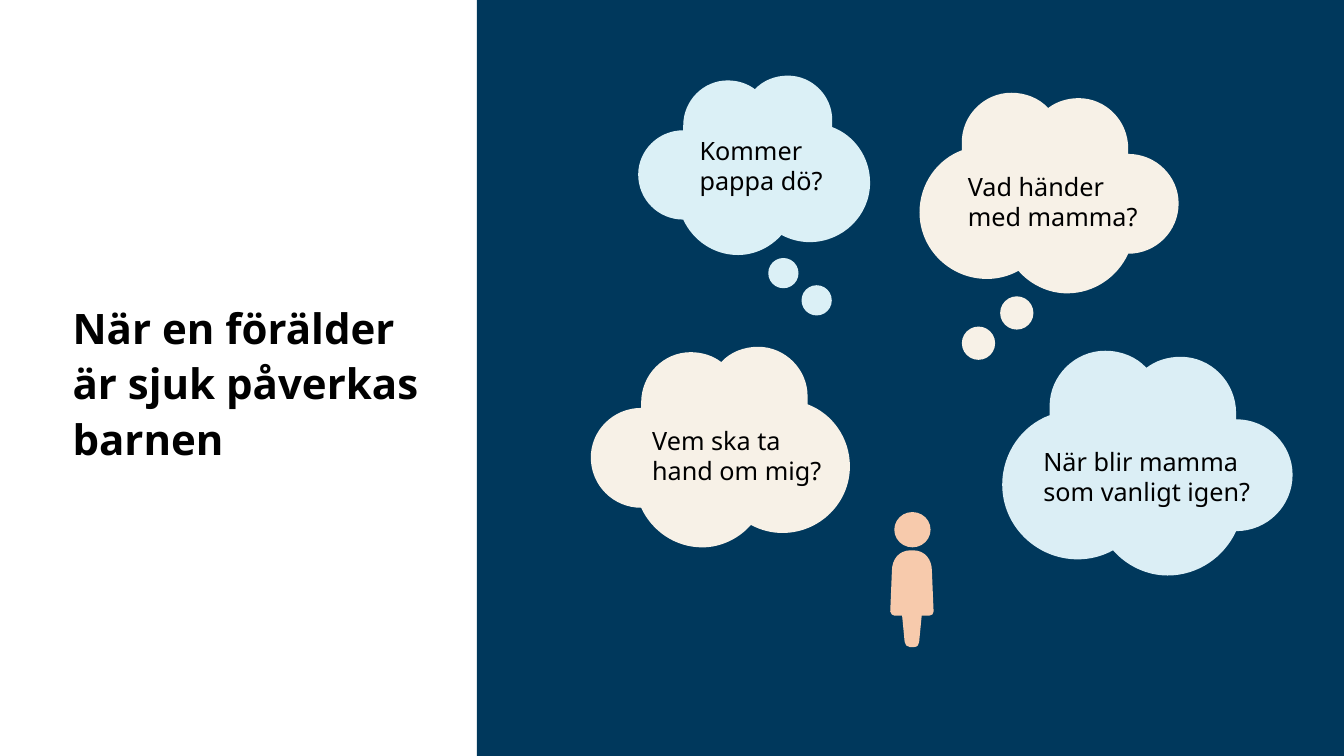
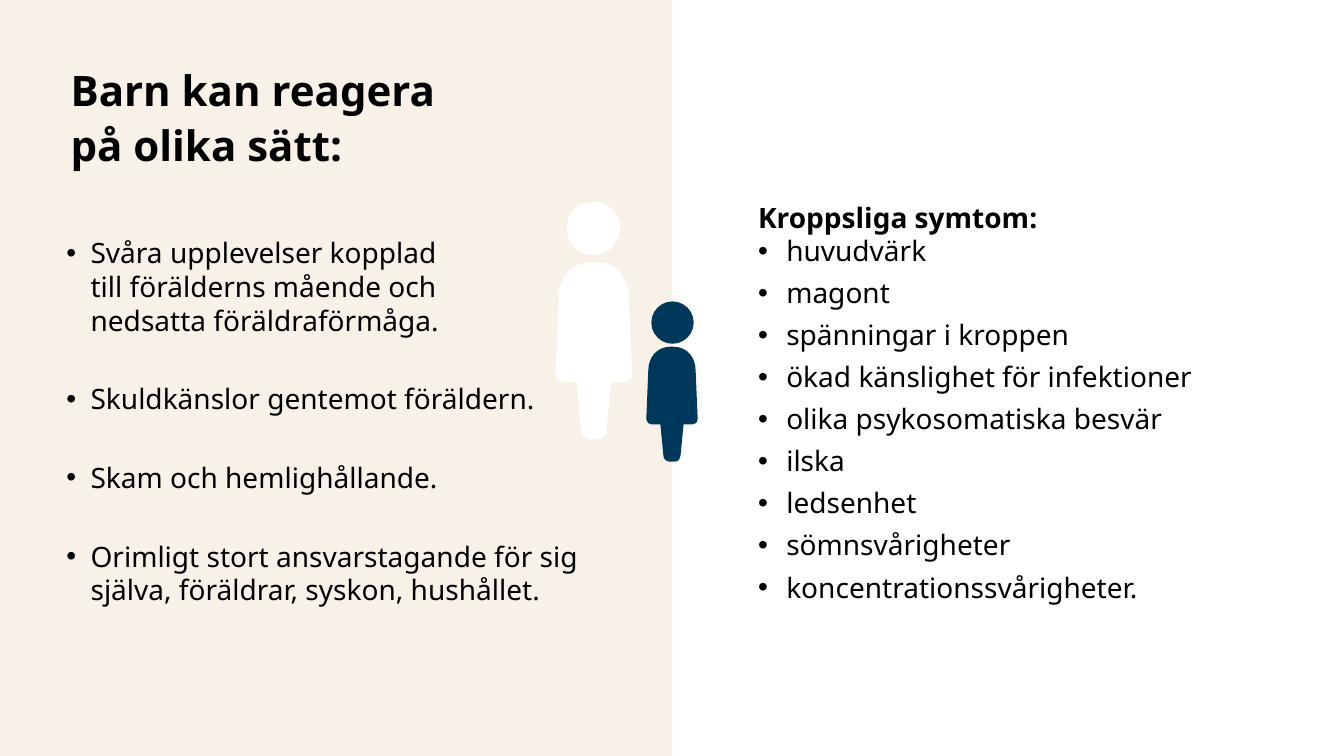
from dataclasses import dataclass
from itertools import chain, islice

from lxml import etree
from pptx import Presentation
from pptx.dml.color import RGBColor
from pptx.enum.shapes import MSO_SHAPE
from pptx.oxml import ns
from pptx.shapes import autoshape, shapetree as tree
from pptx.slide import Slide
from pptx.text.text import TextFrame, _Paragraph as Para
from pptx.util import Inches, Length, Pt

NAVY = RGBColor(0x00, 0x38, 0x5C)
CREAM = RGBColor(0xF7, 0xF1, 0xE7)
ICE = RGBColor(0xDB, 0xF0, 0xF6)
MIST = RGBColor(0xDB, 0xEE, 0xF5)
PEACH = RGBColor(0xF7, 0xCA, 0xAC)
WHITE = RGBColor(0xFF, 0xFF, 0xFF)
BLACK = RGBColor(0x00, 0x00, 0x00)
FONT = "Noto Sans"
WIDE, HIGH = 13.33, 7.5

Point = tuple[float, float]
Shapes = tree.SlideShapes | tree.GroupShapes


@dataclass(frozen=True)
class Box:
    x: float
    y: float
    w: float
    h: float

    def emu(self) -> tuple[Length, ...]:
        return tuple(Inches(v) for v in (self.x, self.y, self.w, self.h))


@dataclass(frozen=True)
class Form:
    """An outline of lines (one point) and curves (three points)."""
    w: float
    h: float
    start: Point
    legs: tuple[tuple[Point, ...], ...]


@dataclass(frozen=True)
class Cloud:
    box: Box
    fill: RGBColor
    label: Box
    lines: tuple[str, ...]
    flip: bool = False
    dots: tuple[Box, ...] = ()


@dataclass(frozen=True)
class Person:
    body: Box
    head: Box
    fill: RGBColor


PUFF = Form(2.88, 2.23, (2.32, 0.68), (
    ((2.32, 0.66), (2.32, 0.64), (2.32, 0.62)),
    ((2.32, 0.31), (2.07, 0.06), (1.77, 0.06)),
    ((1.64, 0.06), (1.52, 0.1), (1.43, 0.17)),
    ((1.33, 0.06), (1.18, 0), (1.02, 0)),
    ((0.72, 0), (0.47, 0.25), (0.47, 0.55)),
    ((0.47, 0.58), (0.47, 0.61), (0.47, 0.64)),
    ((0.2, 0.74), (0, 1.01), (0, 1.33)),
    ((0, 1.74), (0.34, 2.07), (0.75, 2.07)),
    ((0.87, 2.07), (0.99, 2.04), (1.1, 1.98)),
    ((1.23, 2.13), (1.43, 2.23), (1.64, 2.23)),
    ((1.94, 2.23), (2.2, 2.05), (2.32, 1.79)),
    ((2.63, 1.79), (2.88, 1.54), (2.88, 1.23)),
    ((2.88, 0.93), (2.63, 0.68), (2.32, 0.68)),
))
DRESS = Form(0.51, 1.14, (0.27, 0), (
    ((0.24, 0),),
    ((0.1, 0), (0.02, 0.11), (0.02, 0.24)),
    ((0, 0.72),),
    ((0, 0.75), (0.03, 0.77), (0.05, 0.77)),
    ((0.14, 0.77),),
    ((0.17, 1.08),),
    ((0.17, 1.11), (0.2, 1.14), (0.23, 1.14)),
    ((0.28, 1.14),),
    ((0.32, 1.14), (0.34, 1.11), (0.34, 1.08)),
    ((0.37, 0.77),),
    ((0.46, 0.77),),
    ((0.49, 0.77), (0.51, 0.75), (0.51, 0.72)),
    ((0.49, 0.24),),
    ((0.49, 0.11), (0.41, 0), (0.27, 0)),
))

CLOUDS = (
    Cloud(Box(6.33, 0.75, 2.3, 1.78), ICE, Box(6.84, 1.29, 1.71, 0.71),
          ("Kommer pappa dö?",), True,
          (Box(7.62, 2.56, 0.3, 0.3), Box(7.95, 2.83, 0.3, 0.3))),
    Cloud(Box(9.12, 0.92, 2.57, 1.99), CREAM, Box(9.5, 1.65, 2.02, 0.71),
          ("Vad händer med mamma?",), False,
          (Box(9.92, 2.94, 0.33, 0.33), Box(9.54, 3.24, 0.33, 0.33))),
    Cloud(Box(5.86, 3.44, 2.57, 1.99), CREAM, Box(6.37, 4.17, 1.99, 0.71),
          ("Vem ska ta", "hand om mig?"), True),
    Cloud(Box(9.94, 3.48, 2.88, 2.23), MIST, Box(10.25, 4.38, 2.37, 0.71),
          ("När blir mamma som vanligt igen?",)),
)
CHILD = Person(Box(8.83, 5.46, 0.43, 0.96), Box(8.87, 5.08, 0.36, 0.35), PEACH)
FAMILY = (
    Person(Box(5.51, 2.6, 0.76, 1.76), Box(5.62, 2, 0.53, 0.53), WHITE),
    Person(Box(6.41, 3.44, 0.51, 1.14), Box(6.46, 2.99, 0.42, 0.42), NAVY),
)
FEELINGS = (
    (Box(0.56, 2.29, 3.98, 1.11),
     "Svåra upplevelser kopplad till förälderns mående och nedsatta föräldraförmåga."),
    (Box(0.56, 3.74, 4.95, 0.44), "Skuldkänslor gentemot föräldern."),
    (Box(0.56, 4.52, 4.43, 0.44), "Skam och hemlighållande."),
    (Box(0.56, 5.3, 5.55, 0.77),
     "Orimligt stort ansvarstagande för sig själva, föräldrar, syskon, hushållet."),
)
SIGNS = (
    "huvudvärk", "magont", "spänningar i kroppen",
    "ökad känslighet för infektioner", "olika psykosomatiska besvär",
    "ilska", "ledsenhet", "sömnsvårigheter", "koncentrationssvårigheter.",
)


def paint(shape: autoshape.Shape, fill: RGBColor) -> None:
    shape.shadow.inherit = False
    shape.fill.solid()
    shape.fill.fore_color.rgb = fill
    shape.line.fill.background()


def plain(shapes: Shapes, kind: MSO_SHAPE, box: Box, fill: RGBColor) -> None:
    paint(shapes.add_shape(kind, *box.emu()), fill)


def bend(shape: autoshape.Shape, form: Form) -> None:
    """Turn each run of three line segments that makes a curve into one."""
    nodes = iter(list(shape._element.iter(ns.qn("a:lnTo"))))
    for leg in form.legs:
        group = list(islice(nodes, len(leg)))
        if len(leg) == 3:
            arc = etree.Element(ns.qn("a:cubicBezTo"))
            group[0].addprevious(arc)
            for node in group:
                arc.append(node[0])
                node.getparent().remove(node)


def trace(shapes: Shapes, form: Form, box: Box, fill: RGBColor,
          flip: bool = False) -> None:
    """Draw a form stretched to a box, mirrored on request."""
    def place(dot: Point) -> tuple[Length, Length]:
        part = dot[0] / form.w
        return (Inches(box.x + box.w * (1 - part if flip else part)),
                Inches(box.y + box.h * dot[1] / form.h))

    pen = shapes.build_freeform(*place(form.start))
    pen.add_line_segments(map(place, chain(*form.legs)), close=True)
    shape = pen.convert_to_shape()
    bend(shape, form)
    paint(shape, fill)


def frame(slide: Slide, box: Box) -> TextFrame:
    body = slide.shapes.add_textbox(*box.emu()).text_frame
    body.word_wrap = True
    return body


def write(para: Para, words: str, size: int, bold: bool = False) -> None:
    run = para.add_run()
    run.text = words
    font = run.font
    font.name, font.size, font.bold = FONT, Pt(size), bold
    font.color.rgb = BLACK


def bullet(para: Para, indent: float) -> None:
    props = para._p.get_or_add_pPr()
    props.set("marL", str(Inches(indent)))
    props.set("indent", str(Inches(-indent)))
    etree.SubElement(props, ns.qn("a:buFont")).set("typeface", "Arial")
    etree.SubElement(props, ns.qn("a:buChar")).set("char", "•")


def title(slide: Slide, box: Box, words: str) -> None:
    body = frame(slide, box)
    body.margin_left = body.margin_right = body.margin_top = 0
    para = body.paragraphs[0]
    para.line_spacing = 1.1
    write(para, words, 30, True)


def think(slide: Slide, cloud: Cloud) -> None:
    """Draw a thought cloud, grouped with its trail of dots."""
    shapes = slide.shapes
    if cloud.dots:
        shapes = shapes.add_group_shape().shapes
    trace(shapes, PUFF, cloud.box, cloud.fill, cloud.flip)
    for dot in cloud.dots:
        plain(shapes, MSO_SHAPE.OVAL, dot, cloud.fill)


def label(slide: Slide, cloud: Cloud) -> None:
    body = frame(slide, cloud.label)
    for n, line in enumerate(cloud.lines):
        write(body.add_paragraph() if n else body.paragraphs[0], line, 18)


def stand(slide: Slide, who: Person) -> None:
    """Draw a person as a group of body and head."""
    shapes = slide.shapes.add_group_shape().shapes
    trace(shapes, DRESS, who.body, who.fill)
    plain(shapes, MSO_SHAPE.OVAL, who.head, who.fill)


def worries(slide: Slide) -> None:
    plain(slide.shapes, MSO_SHAPE.RECTANGLE,
          Box(4.73, 0, WIDE - 4.73, HIGH), NAVY)
    title(slide, Box(0.72, 2.95, 3.6, 1.6),
          "När en förälder är sjuk påverkas barnen")
    for draw in (think, label):
        for cloud in CLOUDS:
            draw(slide, cloud)
    stand(slide, CHILD)


def signs(slide: Slide) -> None:
    plain(slide.shapes, MSO_SHAPE.RECTANGLE, Box(0, 0, 6.67, HIGH), CREAM)
    title(slide, Box(0.7, 0.59, 4.07, 1.39), "Barn kan reagera på olika sätt:")
    for box, words in FEELINGS:
        para = frame(slide, box).paragraphs[0]
        bullet(para, 0.24)
        write(para, words, 20)
    body = frame(slide, Box(7.42, 1.77, 4.72, 4.31))
    head = body.paragraphs[0]
    head.line_spacing = 1.5
    write(head, "Kroppsliga symtom:", 20, True)
    for words in SIGNS:
        para = body.add_paragraph()
        bullet(para, 0.28)
        para.space_after = Pt(6)
        write(para, words, 20)
    for who in FAMILY:
        stand(slide, who)


def main() -> None:
    deck = Presentation()
    deck.slide_width, deck.slide_height = Inches(WIDE), Inches(HIGH)
    for draw in (worries, signs):
        draw(deck.slides.add_slide(deck.slide_layouts[6]))
    deck.save("out.pptx")


if __name__ == "__main__":
    main()
